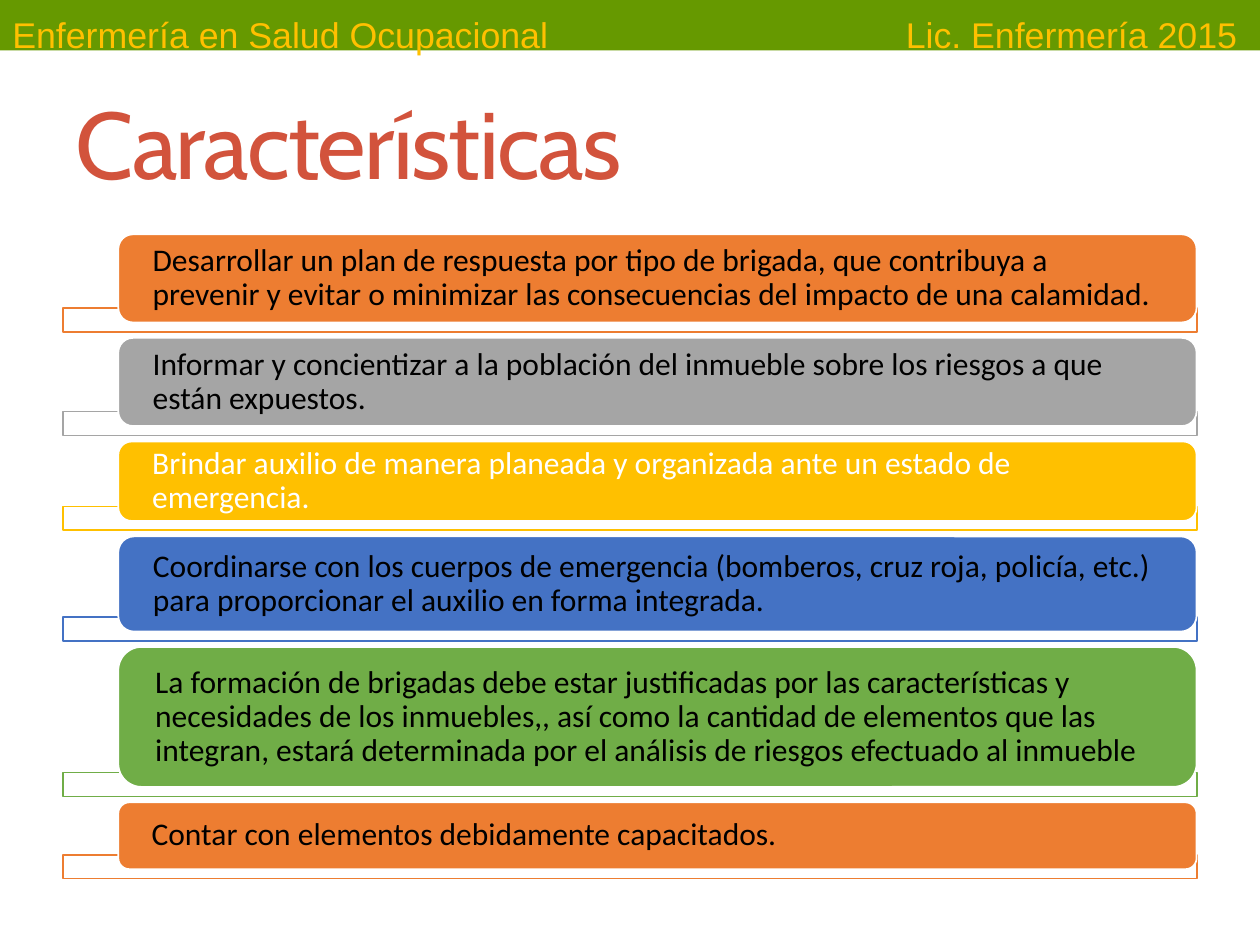
from pptx import Presentation
from pptx.dml.color import RGBColor
from pptx.enum.shapes import MSO_SHAPE
from pptx.enum.text import MSO_ANCHOR, MSO_AUTO_SIZE, PP_ALIGN
from pptx.oxml.ns import qn
from pptx.util import Pt
from lxml import etree

RECT, ROUNDED = MSO_SHAPE.RECTANGLE, MSO_SHAPE.ROUNDED_RECTANGLE
TOP, MIDDLE = MSO_ANCHOR.TOP, MSO_ANCHOR.MIDDLE

# Content: header (text, left, width) and features (text, height, fill, text colour)
HEADERS = [
    ("Enfermería en Salud Ocupacional", 0, 332),
    ("Lic. Enfermería 2015", 510.5, 209.5),
]
TITLE = "Características"
FEATURES = [
    ("Desarrollar un plan de respuesta por tipo de brigada, que contribuya a prevenir "
     "y evitar o minimizar las consecuencias del impacto de una calamidad.",
     50.4, "ED7D31", "000000"),
    ("Informar y concientizar a la población del inmueble sobre los riesgos a que "
     "están expuestos.", 50.4, "A5A5A5", "000000"),
    ("Brindar auxilio de manera planeada y organizada ante un estado de emergencia.",
     45.4, "FFC000", "FFFFFF"),
    ("Coordinarse con los cuerpos de emergencia (bomberos, cruz roja, policía, etc.) "
     "para proporcionar el auxilio en forma integrada.", 54.4, "4472C4", "000000"),
    ("La formación de brigadas debe estar justificadas por las características y "
     "necesidades de los inmuebles,, así como la cantidad de elementos que las "
     "integran, estará determinada por el análisis de riesgos efectuado al inmueble",
     80, "70AD47", "000000"),
    ("Contar con elementos debidamente capacitados.", 38.2, "ED7D31", "000000"),
]

# Layout in points
LIST_TOP, LIST_LEFT, LIST_WIDTH = 133.9, 36, 648
BOX_LEFT, BOX_WIDTH = 67.6, 616.2
BAR_HEIGHT, BAR_OVERLAP, GAP = 13.7, 8.3, 3.4


def colour(value):
    return RGBColor.from_string(value)


def write(shape, text, *, size, font, fill, anchor=TOP, wrap=True, side=7.2,
          edge=3.6, line_spacing=None, before=0, tracking=None):
    frame = shape.text_frame
    frame.auto_size = MSO_AUTO_SIZE.NONE
    frame.word_wrap = wrap
    frame.vertical_anchor = anchor
    frame.margin_left = frame.margin_right = Pt(side)
    frame.margin_top = frame.margin_bottom = Pt(edge)
    para = frame.paragraphs[0]
    para.alignment = PP_ALIGN.LEFT
    para.space_before = Pt(before)
    if line_spacing:
        para.line_spacing = line_spacing
    span = para.add_run()
    span.text = text
    span.font.size = Pt(size)
    span.font.name = font
    span.font.color.rgb = colour(fill)
    if tracking:
        span.font._element.set("spc", str(tracking))


def add_block(page, kind, left, top, width, height, fill, line=None, opacity=None):
    block = page.shapes.add_shape(kind, Pt(left), Pt(top), Pt(width), Pt(height))
    block.shadow.inherit = False
    block.fill.solid()
    block.fill.fore_color.rgb = colour(fill)
    if opacity:
        tint = block._element.spPr.find(qn("a:solidFill")).find(qn("a:srgbClr"))
        etree.SubElement(tint, qn("a:alpha")).set("val", str(opacity * 1000))
    if line:
        block.line.color.rgb = colour(line)
        block.line.width = Pt(1)
    else:
        block.line.fill.background()
    return block


deck = Presentation()
deck.slide_width, deck.slide_height = Pt(720), Pt(540)
page = deck.slides.add_slide(deck.slide_layouts[5])

# Header band
add_block(page, RECT, 0, 0, 720, 28.8, "669900")
for text, left, width in HEADERS:
    box = page.shapes.add_textbox(Pt(left), Pt(3.6), Pt(width), Pt(28))
    write(box, text, size=20.4, font="Arial", fill="FFC000", wrap=False, before=4)

# Title
title = page.shapes.title
title.left, title.top, title.width, title.height = Pt(36), Pt(41.8), Pt(648), Pt(77.8)
write(title, TITLE, size=54, font="Cabin", fill="D2533C", anchor=MIDDLE, tracking=-100)

# Features: an outlined bar behind the foot of each rounded box
top = LIST_TOP
for text, height, fill, ink in FEATURES:
    bar_top = top + height - BAR_OVERLAP
    add_block(page, RECT, LIST_LEFT, bar_top, LIST_WIDTH, BAR_HEIGHT, "FFFFFF",
              line=fill, opacity=90)
    box = add_block(page, ROUNDED, BOX_LEFT, top, BOX_WIDTH, height, fill, line="FFFFFF")
    write(box, text, size=18, font="Calibri", fill=ink, anchor=MIDDLE, side=17.2,
          edge=0, line_spacing=0.9)
    top = bar_top + BAR_HEIGHT + GAP

deck.save("out.pptx")
